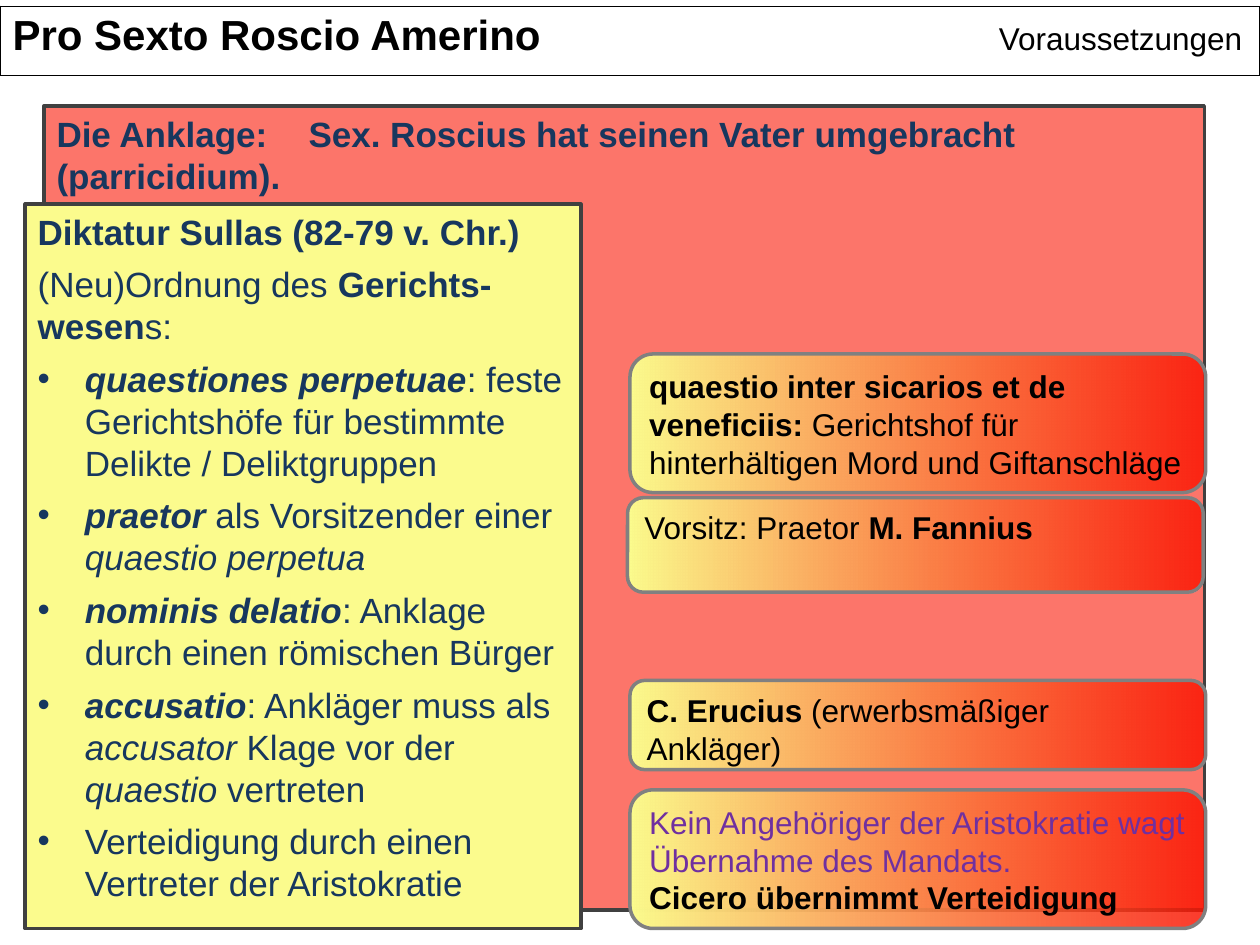
from dataclasses import dataclass

from lxml import etree
from pptx import Presentation
from pptx import util as u
from pptx.dml.color import RGBColor
from pptx.enum import shapes, text
from pptx.oxml import ns

FONT = "Arial"
BLACK, NAVY, PURPLE = "000000", "17375E", "7030A0"
RED, YELLOW = "FB1503", "FBFB8D"
DARK_GREY, GREY = "404040", "808080"


@dataclass
class Run:
    text: str
    bold: bool = False
    italic: bool = False


@dataclass
class Line:
    runs: list[Run]
    size: float = 18
    color: str = BLACK
    space_after: float = 0
    bullet: bool = False
    tab: float = 0


@dataclass
class Box:
    left: float
    top: float
    width: float
    height: float
    lines: list[Line]


def rgb(color: str) -> RGBColor:
    return RGBColor.from_string(color)


def add_element(parent, tag: str, **attributes: str):
    return etree.SubElement(parent, ns.qn(tag), attributes)


def set_alpha(fill_element, percent: int) -> None:
    color = list(fill_element.iter(ns.qn("a:srgbClr")))[-1]
    add_element(color, "a:alpha", val=str(percent * 1000))


def write_line(paragraph, line: Line) -> None:
    paragraph.alignment = text.PP_ALIGN.LEFT
    paragraph.space_after = u.Pt(line.space_after)
    font = paragraph.font
    font.name, font.size = FONT, u.Pt(line.size)
    font.color.rgb = rgb(line.color)
    properties = paragraph._p.get_or_add_pPr()
    defaults = properties.find(ns.qn("a:defRPr"))
    if line.bullet:
        properties.set("marL", str(u.Pt(27)))
        properties.set("indent", str(-u.Pt(27)))
        defaults.addprevious(add_element(properties, "a:buFont", typeface=FONT))
        defaults.addprevious(add_element(properties, "a:buChar", char="•"))
    if line.tab:
        stops = add_element(properties, "a:tabLst")
        add_element(stops, "a:tab", pos=str(u.Pt(line.tab)), algn="l")
        defaults.addprevious(stops)
    for part in line.runs:
        run = paragraph.add_run()
        run.text = part.text
        run.font.bold, run.font.italic = part.bold, part.italic


def write_lines(frame, lines: list[Line]) -> None:
    frame.word_wrap = True
    frame.vertical_anchor = text.MSO_ANCHOR.TOP
    for index, line in enumerate(lines):
        paragraph = frame.add_paragraph() if index else frame.paragraphs[0]
        write_line(paragraph, line)


def draw_box(slide, box: Box, kind, outline: str):
    shape = slide.shapes.add_shape(
        kind, u.Pt(box.left), u.Pt(box.top), u.Pt(box.width), u.Pt(box.height))
    shape.shadow.inherit = False
    shape.line.color.rgb = rgb(outline)
    shape.line.width = u.Pt(2)
    write_lines(shape.text_frame, box.lines)
    return shape


def draw_panel(slide, box: Box, color: str, alpha: int = 100) -> None:
    shape = draw_box(slide, box, shapes.MSO_SHAPE.RECTANGLE, DARK_GREY)
    shape.fill.solid()
    shape.fill.fore_color.rgb = rgb(color)
    if alpha < 100:
        set_alpha(shape._element.spPr.find(ns.qn("a:solidFill")), alpha)


def draw_case_note(slide, box: Box) -> None:
    shape = draw_box(slide, box, shapes.MSO_SHAPE.ROUNDED_RECTANGLE, GREY)
    shape.fill.gradient()
    shape.fill.gradient_angle = 0
    for stop, color, position in zip(shape.fill.gradient_stops, (YELLOW, RED), (0, 1)):
        stop.color.rgb = rgb(color)
        stop.position = position
    set_alpha(shape._element.spPr.find(ns.qn("a:gradFill")), 83)


def draw_header(slide, line: Line) -> None:
    frame = slide.shapes.add_table(1, 1, u.Pt(0), u.Pt(3.6), u.Pt(720), u.Pt(39.6))
    table = frame.table
    table.first_row = table.horz_banding = False
    cell = table.cell(0, 0)
    write_lines(cell.text_frame, [line])
    properties = cell._tc.get_or_add_tcPr()
    for side in ("a:lnL", "a:lnR", "a:lnT", "a:lnB"):
        border = add_element(properties, side, w=str(u.Pt(1)))
        add_element(add_element(border, "a:solidFill"), "a:srgbClr", val=BLACK)
    cell.fill.background()
    cell.text_frame.paragraphs[0].runs[-1].font.size = u.Pt(18)


def panel_line(*runs: Run, bullet: bool = False, tab: float = 0) -> Line:
    return Line(list(runs), 20, NAVY, 6, bullet, tab)


def term(name: str) -> Run:
    return Run(name, bold=True, italic=True)


HEADER = Line([Run("Pro Sexto Roscio Amerino\t", bold=True), Run("Voraussetzungen")],
              size=24, tab=563.6)

CHARGE = Box(25.2, 60.5, 663, 459.4, [
    panel_line(Run("Die Anklage:\tSex. Roscius hat seinen Vater umgebracht (parricidium).",
                   bold=True), tab=144)])

COURT_SYSTEM = Box(14.4, 116.6, 317.5, 414, [
    panel_line(Run("Diktatur Sullas (82-79 v. Chr.)", bold=True)),
    panel_line(Run("(Neu)Ordnung des "), Run("Gerichts-wesen", bold=True), Run("s:")),
    panel_line(term("quaestiones perpetuae"),
               Run(": feste Gerichtshöfe für bestimmte Delikte / Deliktgruppen"), bullet=True),
    panel_line(term("praetor"), Run(" als Vorsitzender einer "),
               Run("quaestio perpetua", italic=True), bullet=True),
    panel_line(term("nominis delatio"), Run(": Anklage durch einen römischen Bürger"),
               bullet=True),
    panel_line(term("accusatio"), Run(": Ankläger muss als "), Run("accusator", italic=True),
               Run(" Klage vor der "), Run("quaestio", italic=True), Run(" vertreten"),
               bullet=True),
    panel_line(Run("Verteidigung durch einen Vertreter der Aristokratie"), bullet=True)])

CASE_NOTES = [
    Box(360, 202.3, 329, 79.2, [
        Line([Run("quaestio inter sicarios et de veneficiis: ", bold=True),
              Run("Gerichtshof für hinterhältigen Mord und Giftanschläge")])]),
    Box(358.6, 284.4, 329, 54, [
        Line([Run("Vorsitz: Praetor "), Run("M. Fannius", bold=True)])]),
    Box(360, 388.8, 329, 51, [
        Line([Run("C. Erucius ", bold=True), Run("(erwerbsmäßiger Ankläger)")])]),
    Box(360, 451.4, 329, 79.2, [
        Line([Run("Kein Angehöriger der Aristokratie wagt Übernahme des Mandats.")],
             color=PURPLE),
        Line([Run("Cicero übernimmt Verteidigung", bold=True)])]),
]


def main() -> None:
    presentation = Presentation()
    presentation.slide_width, presentation.slide_height = u.Pt(720), u.Pt(540)
    slide = presentation.slides.add_slide(presentation.slide_layouts[6])
    draw_header(slide, HEADER)
    draw_panel(slide, CHARGE, RED, alpha=59)
    draw_panel(slide, COURT_SYSTEM, YELLOW)
    for note in CASE_NOTES:
        draw_case_note(slide, note)
    presentation.save("out.pptx")


if __name__ == "__main__":
    main()
